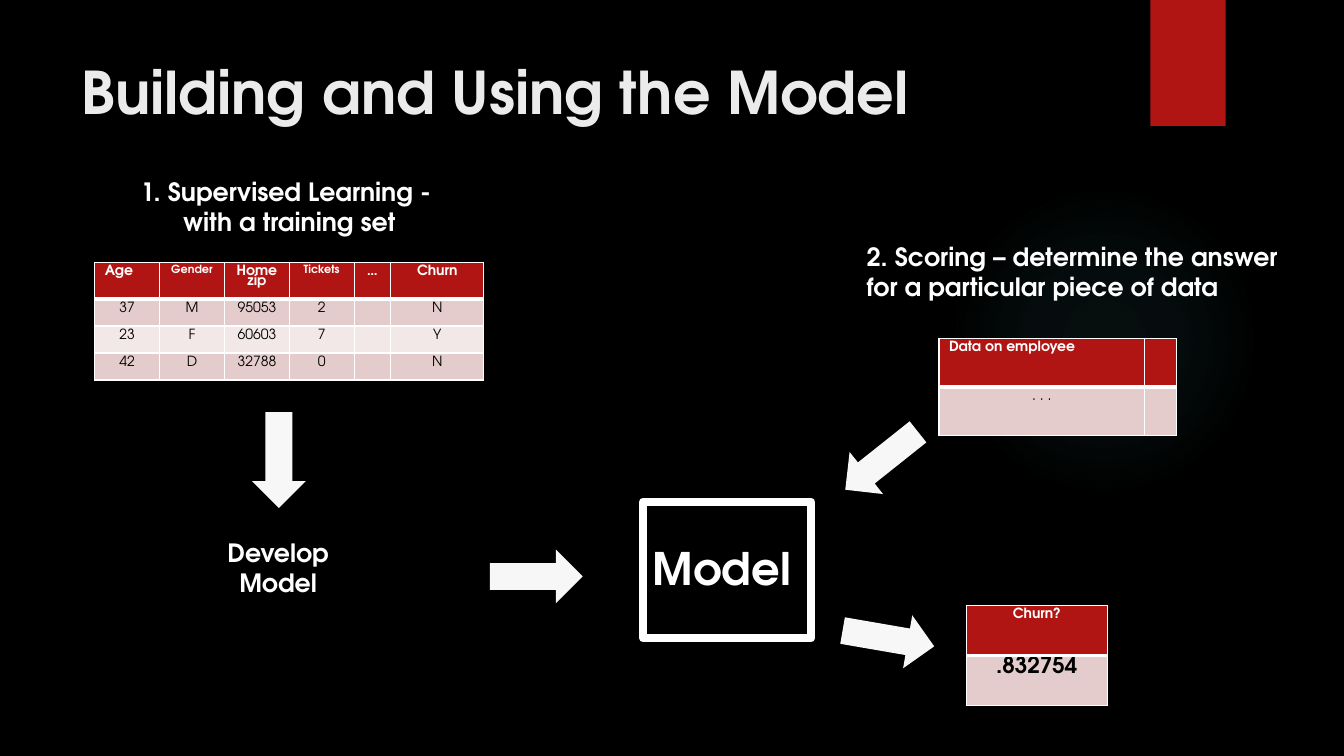
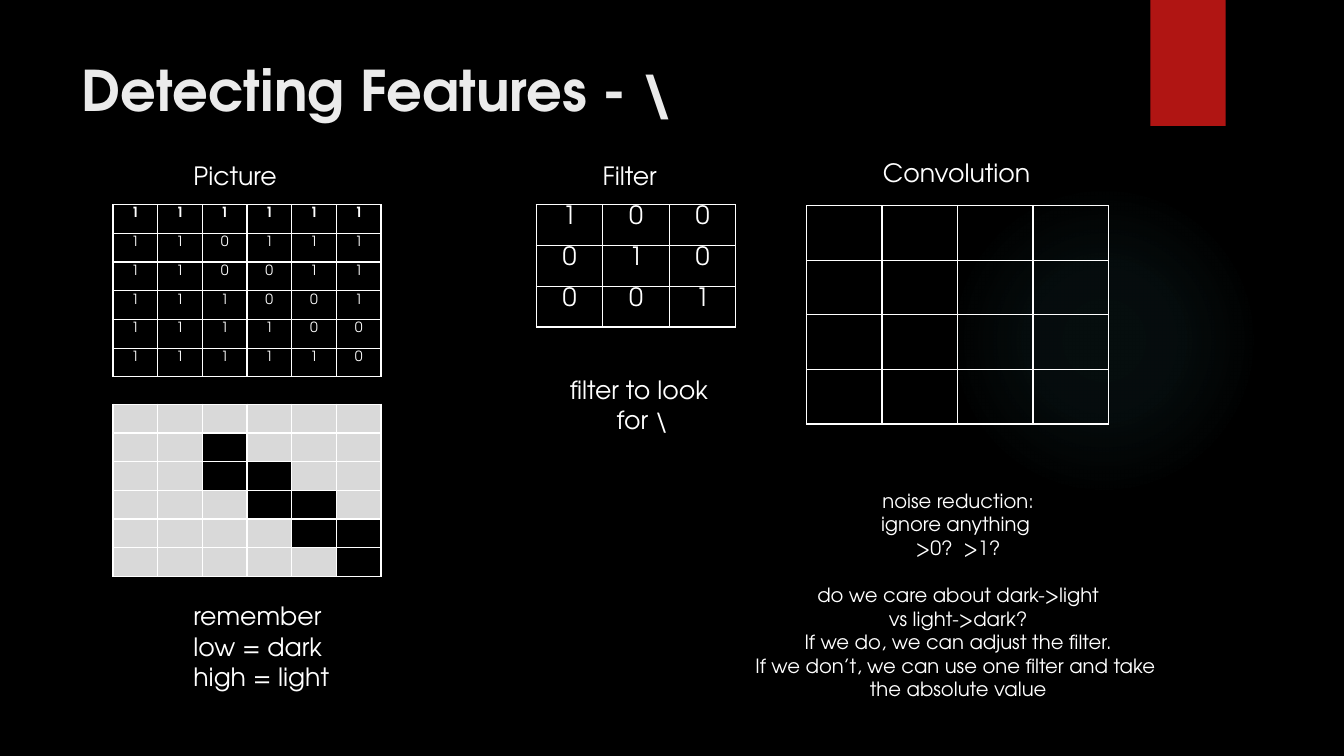
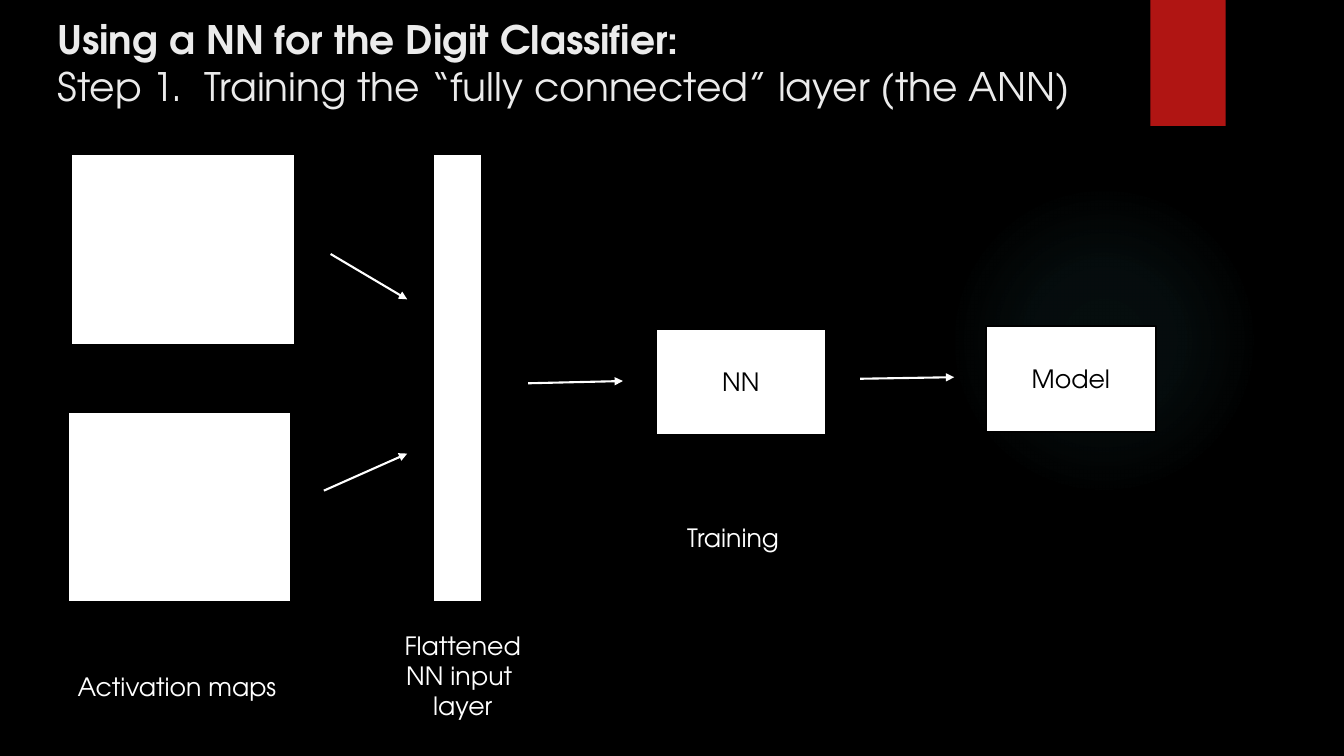
import dataclasses

import pptx
import pptx.dml.color
import pptx.enum.shapes
import pptx.enum.text
import pptx.oxml
import pptx.oxml.ns
import pptx.util

Pt = pptx.util.Pt
SHAPES = pptx.enum.shapes.MSO_SHAPE
ALIGN = pptx.enum.text.PP_ALIGN
ANCHOR = pptx.enum.text.MSO_ANCHOR
AUTO_SIZE = pptx.enum.text.MSO_AUTO_SIZE
NAMESPACE = pptx.oxml.ns.nsdecls("a")

WIDTH = pptx.util.Inches(13.333)
HEIGHT = pptx.util.Inches(7.5)


@dataclasses.dataclass(frozen=True)
class Theme:
    font: str = "TeX Gyre Adventor"
    background: str = "000000"
    title: str = "EBEBEB"
    light: str = "FFFFFF"
    dark: str = "000000"
    accent: str = "B01513"
    bands: tuple = ("E4CCCC", "F2E8E7")
    arrow: str = "F7F7F7"
    bright_pixel: str = "D9D9D9"
    halo: str = "50B9C1"
    title_size: int = 42
    model_size: int = 32
    body_size: int = 18
    score_size: int = 16
    note_size: int = 14
    cell_size: int = 10
    narrow_size: int = 8
    cell_spacing: float = 0.8


THEME = Theme()


# Measures: every position and size is a percentage of the slide
def across(share):
    return int(WIDTH * share / 100)


def down(share):
    return int(HEIGHT * share / 100)


def area(left, top, width, height):
    return across(left), down(top), across(width), down(height)


# Styling
def rgb(color):
    return pptx.dml.color.RGBColor.from_string(color)


def set_fill(fill, color):
    if color:
        fill.solid()
        fill.fore_color.rgb = rgb(color)
    else:
        fill.background()


def set_font(font, size, color, bold=False):
    font.name = THEME.font
    font.size = Pt(size)
    font.color.rgb = rgb(color)
    font.bold = bold


def write_lines(frame, lines, size, color, bold=False, align=ALIGN.LEFT):
    for index, line in enumerate(lines):
        paragraph = frame.paragraphs[0] if index == 0 else frame.add_paragraph()
        paragraph.text = line
        paragraph.alignment = align
        set_font(paragraph.font, size, color, bold)


# Elements
def add_text(slide, place, lines, size=THEME.body_size, bold=False,
             align=ALIGN.LEFT, wrap=False):
    frame = slide.shapes.add_textbox(*area(*place)).text_frame
    frame.word_wrap = wrap
    frame.auto_size = AUTO_SIZE.SHAPE_TO_FIT_TEXT
    write_lines(frame, lines, size, THEME.light, bold, align)
    return frame


def add_title(slide, text, size=THEME.title_size, subtitle=None,
              place=(5.3, 6.67, 77.2, 20.4)):
    frame = slide.shapes.add_textbox(*area(*place)).text_frame
    frame.word_wrap = True
    paragraph = frame.paragraphs[0]
    set_font(paragraph.font, size, THEME.title)
    heading = paragraph.add_run()
    heading.text = text
    heading.font.bold = True
    if subtitle:
        paragraph.add_line_break()
        paragraph.add_run().text = subtitle


def add_figure(slide, kind, place, fill=None, line=None, line_width=1.5):
    shape = slide.shapes.add_shape(kind, *area(*place))
    shape.shadow.inherit = False
    set_fill(shape.fill, fill)
    set_fill(shape.line.fill, line)
    if line:
        shape.line.width = Pt(line_width)
    return shape


def add_block(slide, place, label=None):
    shape = add_figure(slide, SHAPES.RECTANGLE, place, THEME.light, THEME.dark)
    if label:
        shape.text_frame.vertical_anchor = ANCHOR.MIDDLE
        write_lines(shape.text_frame, [label], THEME.body_size, THEME.dark,
                    align=ALIGN.CENTER)


def add_block_arrow(slide, left, top, rotation=0, length=12.3):
    shape = add_figure(slide, SHAPES.DOWN_ARROW, (left, top, 4, length), THEME.arrow)
    shape.rotation = rotation


def add_line_arrow(slide, start, end):
    connector = slide.shapes.add_connector(
        pptx.enum.shapes.MSO_CONNECTOR.STRAIGHT,
        across(start[0]), down(start[1]), across(end[0]), down(end[1]))
    connector.line.width = Pt(1.5)
    set_fill(connector.line.fill, THEME.light)
    connector.line._get_or_add_ln().append(
        pptx.oxml.parse_xml(f'<a:tailEnd {NAMESPACE} type="triangle"/>'))
    connector._element.spPr.append(pptx.oxml.parse_xml(f"<a:effectLst {NAMESPACE}/>"))


def add_halo(slide):
    halo = add_figure(slide, SHAPES.OVAL, (70.6, 24.4, 23.1, 41.1))
    stops = "".join(
        f'<a:gs pos="{position * 1000}"><a:srgbClr val="{THEME.halo}">'
        f'<a:alpha val="{alpha * 1000}"/></a:srgbClr></a:gs>'
        for position, alpha in ((0, 7), (36, 6), (69, 0)))
    gradient = pptx.oxml.parse_xml(
        f'<a:gradFill {NAMESPACE}><a:gsLst>{stops}</a:gsLst><a:path path="circle">'
        '<a:fillToRect l="50000" t="50000" r="50000" b="50000"/></a:path></a:gradFill>')
    properties = halo._element.spPr
    properties.replace(properties.find(pptx.oxml.ns.qn("a:noFill")), gradient)


# Tables
def set_borders(cell, top=1, bottom=1):
    properties = cell._tc.get_or_add_tcPr()
    for side, width in (("L", 1), ("R", 1), ("T", top), ("B", bottom)):
        properties.append(pptx.oxml.parse_xml(
            f'<a:ln{side} {NAMESPACE} w="{Pt(width)}"><a:solidFill>'
            f'<a:srgbClr val="{THEME.light}"/></a:solidFill></a:ln{side}>'))


def add_table(slide, left, top, width, row_height, row_count, weights):
    table = slide.shapes.add_table(
        row_count, len(weights),
        *area(left, top, width, row_height * row_count)).table
    table.first_row = table.horz_banding = False
    for column, weight in zip(table.columns, weights):
        column.width = int(across(width) * weight / sum(weights))
    for row in table.rows:
        row.height = down(row_height)
    return table


def fill_cell(cell, text, size, color, fill=None, bold=False, align=ALIGN.CENTER):
    set_fill(cell.fill, fill)
    write_lines(cell.text_frame, [text], size, color, bold, align)
    cell.text_frame.paragraphs[0].line_spacing = THEME.cell_spacing


def add_data_table(slide, place, row_height, weights, header, rows,
                   narrow=(), left_aligned=(), size=THEME.cell_size, bold=False):
    table = add_table(slide, *place, row_height, len(rows) + 1, weights)
    for index, text in enumerate(header):
        cell = table.cell(0, index)
        set_borders(cell, bottom=3)
        fill_cell(cell, text,
                  THEME.narrow_size if text in narrow else THEME.cell_size,
                  THEME.light, THEME.accent, True,
                  ALIGN.LEFT if text in left_aligned else ALIGN.CENTER)
    for number, values in enumerate(rows):
        for index, text in enumerate(values):
            cell = table.cell(number + 1, index)
            set_borders(cell, top=1 if number else 3)
            fill_cell(cell, text, size, THEME.dark, THEME.bands[number % 2], bold)


def add_matrix(slide, place, row_height, rows, size=THEME.cell_size,
               bold_first=False, as_pixels=False):
    table = add_table(slide, *place, row_height, len(rows), [1] * len(rows[0]))
    for number, values in enumerate(rows):
        for index, value in enumerate(values):
            cell = table.cell(number, index)
            set_borders(cell)
            if as_pixels:
                shade = THEME.bright_pixel if value == "1" else THEME.dark
                fill_cell(cell, "", size, THEME.light, shade)
            else:
                fill_cell(cell, value.strip(), size, THEME.light,
                          bold=bold_first and number == 0)


# Slides
def add_slide(presentation):
    slide = presentation.slides.add_slide(presentation.slide_layouts[6])
    set_fill(slide.background.fill, THEME.background)
    add_halo(slide)
    add_figure(slide, SHAPES.RECTANGLE, (85.6, 0, 5.6, 16.67), THEME.accent)
    return slide


def build_model_slide(presentation):
    slide = add_slide(presentation)
    add_title(slide, "Building and Using the Model")

    # Training
    add_text(slide, (9.6, 22.7, 23.85, 9.5),
             ["1. Supervised Learning - ", "with a training set"],
             bold=True, align=ALIGN.CENTER)
    add_data_table(
        slide, (7.05, 34.67, 28.95), 3.2, (0.64, 0.64, 0.64, 0.64, 0.36, 0.92),
        ("Age", "Gender", "Home zip", "Tickets", "…", "Churn"),
        (("37", "M", "95053", "2", "", "N"),
         ("23", "F", "60603", "7", "", "Y"),
         ("42", "D", "32788", "0", "", "N")),
        narrow=("Gender", "Tickets"), left_aligned=("Age",))
    add_block_arrow(slide, 18.75, 54.5, length=12.7)
    add_text(slide, (16.1, 70.4, 9.2, 9.5), ["Develop", "Model"],
             bold=True, align=ALIGN.CENTER)
    add_block_arrow(slide, 37.9, 70.1, 270)

    # Model
    add_text(slide, (47.85, 70.9, 11.8, 20.7), ["Model"], THEME.model_size,
             bold=True, wrap=True)
    add_figure(slide, SHAPES.RECTANGLE, (47.85, 66.4, 12.5, 18),
               line=THEME.light, line_width=6)

    # Scoring
    add_text(slide, (63.75, 31.2, 32.9, 9.5),
             ["2. Scoring – determine the answer", "for a particular piece of data"],
             bold=True)
    add_data_table(slide, (69.86, 44.8, 17.7), 6.4, (2.04, 0.32),
                   ("Data on employee", ""), ((". . .", ""),),
                   left_aligned=("Data on employee",))
    add_block_arrow(slide, 63.6, 54.8, 51.5)
    add_block_arrow(slide, 64.1, 78.3, 279.8)
    add_data_table(slide, (71.9, 80.1, 10.5), 6.6, (1,), ("Churn?",),
                   ((".832754",),), size=THEME.score_size, bold=True)


def build_features_slide(presentation):
    slide = add_slide(presentation)
    add_title(slide, "Detecting Features - \\", 40)

    # Picture as numbers and as pixels
    pixels = ("111111", "110111", "110011", "111001", "111100", "111110")
    add_text(slide, (13.65, 20.5, 7.9, 5.3), ["Picture"])
    add_matrix(slide, (8.4, 27.07, 19.95), 3.8, pixels, bold_first=True)
    add_matrix(slide, (8.4, 53.47, 19.95), 3.8, pixels, as_pixels=True)
    add_text(slide, (13.65, 78.8, 14.2, 13.5),
             ["remember", "low = dark", "high = light"], wrap=True)

    # Filter
    add_text(slide, (44.1, 20.5, 5.6, 5.3), ["Filter"])
    add_matrix(slide, (39.9, 27.07, 14.85), 5.4, ("100", "010", "001"),
               THEME.body_size)
    add_text(slide, (41.5, 48.8, 12.6, 9.5), ["filter to look ", "for \\"],
             align=ALIGN.CENTER)

    # Convolution
    add_text(slide, (64.95, 20.1, 12.7, 5.3), ["Convolution"])
    add_matrix(slide, (60, 27.2, 22.5), 7.22, [[""] * 4] * 4)
    notes = add_text(
        slide, (46.3, 64, 50, 29.6),
        ["noise reduction:", "ignore anything ", ">0?  >1?",
         "do we care about dark->light", "vs light->dark?",
         "If we do, we can adjust the filter.",
         "If we don’t, we can use one filter and take ", "the absolute value"],
        THEME.note_size, align=ALIGN.CENTER, wrap=True)
    notes.paragraphs[3].space_before = Pt(17)


def build_network_slide(presentation):
    slide = add_slide(presentation)
    add_title(slide, "Using a NN for the Digit Classifier:", 28,
              "Step 1.  Training the “fully connected” layer (the ANN)",
              (3.53, 1.33, 82.1, 20.4))

    # Blocks
    add_block(slide, (5.3, 20.4, 16.65, 25.2))
    add_block(slide, (5.03, 54.5, 16.65, 25.2))
    add_block(slide, (32.2, 20.4, 3.65, 59.3))
    add_block(slide, (48.8, 43.5, 12.65, 14), "NN")
    add_block(slide, (73.35, 43.1, 12.65, 14), "Model")

    # Flow
    for start, end in (((24.6, 33.6), (30.3, 39.6)), ((24.1, 64.9), (30.3, 60)),
                       ((39.3, 50.7), (46.35, 50.4)), ((64, 50.1), (71, 49.9))):
        add_line_arrow(slide, start, end)

    # Captions
    add_text(slide, (5.03, 88.1, 17.1, 5.3), ["Activation maps"])
    add_text(slide, (29.25, 82.7, 10.35, 13.5), ["Flattened", "NN input ", "layer"],
             align=ALIGN.CENTER)
    add_text(slide, (50.4, 68.4, 8.55, 5.3), ["Training"])


def main():
    presentation = pptx.Presentation()
    presentation.slide_width = WIDTH
    presentation.slide_height = HEIGHT
    build_model_slide(presentation)
    build_features_slide(presentation)
    build_network_slide(presentation)
    presentation.save("out.pptx")


if __name__ == "__main__":
    main()
